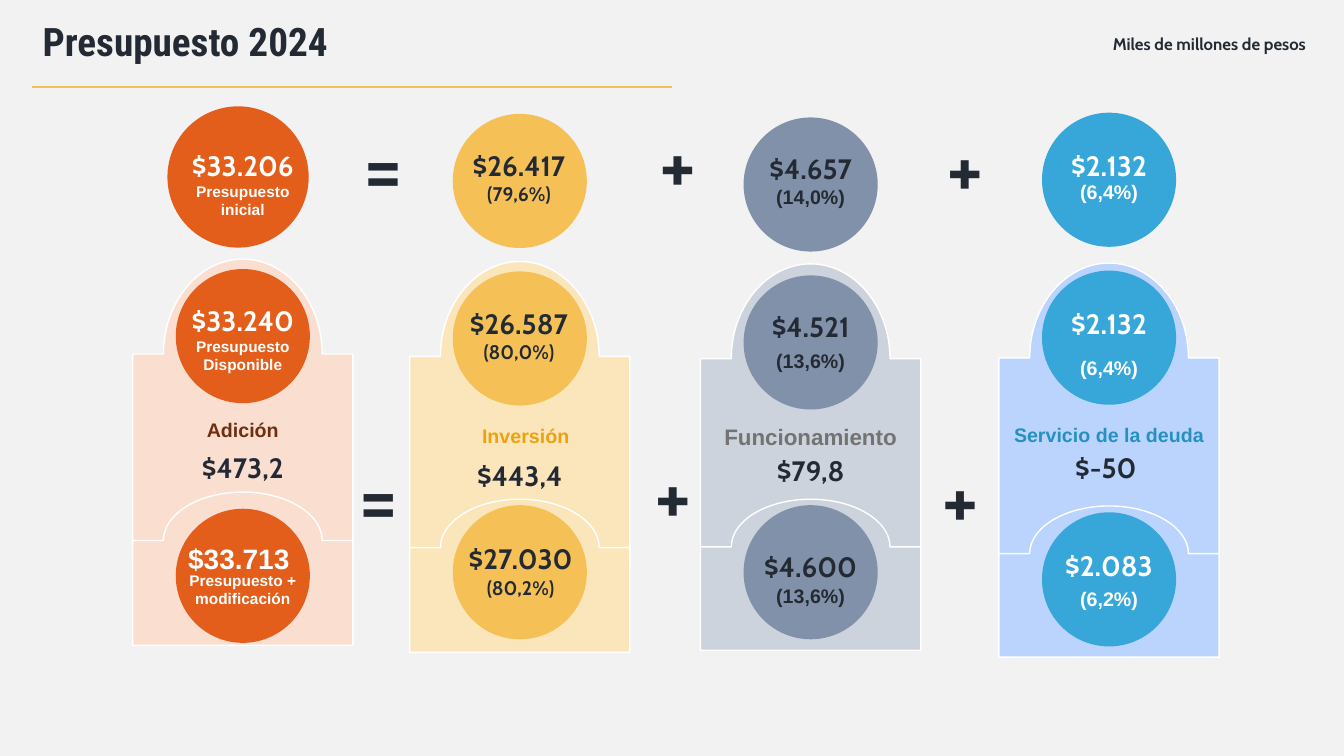
"""Build the 2024 budget slide: initial, available and modified budget by component."""
from dataclasses import dataclass

from lxml.etree import SubElement
from pptx import Presentation
from pptx.dml.color import RGBColor
from pptx.enum.shapes import MSO_CONNECTOR as Connector, MSO_SHAPE as Preset
from pptx.enum.text import MSO_ANCHOR as Anchor, MSO_AUTO_SIZE as AutoSize, PP_ALIGN as Align
from pptx.oxml.ns import qn
from pptx.util import Cm, Pt


@dataclass(frozen=True)
class Theme:
    background: str = "F2F2F2"
    navy: str = "232A34"
    white: str = "FFFFFF"
    amber: str = "F5C157"
    title: tuple = ("Roboto Condensed", 28)
    unit: tuple = ("Cabin", 12)
    amount: tuple = ("Cabin", 20)
    amount_plain: tuple = ("Arial", 20)
    share: tuple = ("Cabin", 14)
    share_plain: tuple = ("Arial", 14)
    note: tuple = ("Arial", 11)
    name: tuple = ("Arial", 14)
    name_large: tuple = ("Arial", 16)
    operator: tuple = ("Montserrat", 44)


@dataclass(frozen=True)
class Component:
    center: float
    fill: str
    tint: str
    ink: str
    accent: str
    cards: tuple
    circles: tuple
    name: tuple
    change: tuple
    captions: tuple
    change_panel: bool = False


CARD_WIDTH, DOME_RADIUS, CIRCLE, ROUNDNESS = 5.55, 2.0, 3.38, 0.55
THEME = Theme()

COMPONENTS = (
    Component(
        13.1, THEME.amber, "FBE6BC", THEME.navy, "EBA20E",
        ((6.59, 7.62, 2.39), (12.58, 3.86, 1.22)),
        ((13.1, 2.87, CIRCLE), (13.1, 6.84, CIRCLE), (13.1, 12.73, CIRCLE)),
        (13.25, 10.55, 5.97, ("Inversión", "name")),
        (13.1, 11.43, 3.35, ("$443,4", "amount")),
        ((13.08, 3.61, 3.3, ("$26.417", "amount"), ("(79,6%)", "share")),
         (13.08, 7.59, 3.3, ("$26.587", "amount"), ("(80,0%)", "share")),
         (13.12, 13.53, 3.78, ("$27.030", "amount"), ("(80,2%)", "share"))),
    ),
    Component(
        20.43, "8091A9", "CCD3DD", THEME.navy, "737373",
        ((6.65, 7.62, 2.39), (12.58, 3.81, 1.2)),
        ((20.43, 2.96, CIRCLE), (20.43, 6.94, CIRCLE), (20.43, 12.73, CIRCLE)),
        (20.43, 10.53, 6.05, ("Funcionamiento", "name_large")),
        (20.43, 11.3, 4.11, ("$79,8", "amount")),
        ((20.43, 3.69, 4.11, ("$4.657", "amount"), ("(14,0%)", "share_plain")),
         (20.43, 7.67, 4.11, ("$4.521", "amount")),
         (20.43, 8.66, 2.39, ("(13,6%)", "share_plain")),
         (20.43, 13.72, 4.11, ("$4.600", "amount")),
         (20.43, 14.58, 2.39, ("(13,6%)", "share_plain"))),
    ),
    Component(
        27.95, "37A7D9", "BAD4FE", THEME.white, "2591C1",
        ((6.63, 7.62, 2.39), (12.75, 3.81, 1.2)),
        ((27.95, 2.84, CIRCLE), (27.95, 6.82, CIRCLE), (27.95, 12.91, CIRCLE)),
        (27.95, 10.53, 6.07, ("Servicio de la deuda", "name")),
        (27.87, 11.23, 4.11, ("$-50", "amount")),
        ((27.95, 3.63, 4.11, ("$2.132", "amount")),
         (27.95, 4.41, 2.39, ("(6,4%)", "share_plain")),
         (27.95, 7.59, 4.11, ("$2.132", "amount")),
         (27.95, 8.84, 2.39, ("(6,4%)", "share_plain")),
         (27.95, 13.69, 4.11, ("$2.083", "amount")),
         (27.95, 14.66, 2.39, ("(6,2%)", "share_plain"))),
    ),
    Component(
        6.12, "E25E1A", "FADFD1", THEME.white, "6F2E0D",
        ((6.53, 7.62, 2.39), (12.4, 3.86, 1.22)),
        ((6.0, 2.68, 3.56), (6.12, 6.78, CIRCLE), (6.12, 12.82, CIRCLE)),
        (6.12, 10.41, 5.69, ("Adición", "name")),
        (6.12, 11.23, 3.35, ("$473,2", "amount")),
        ((6.12, 3.61, 3.76, ("$33.206", "amount"), ("Presupuesto inicial", "note")),
         (6.12, 7.52, 3.3, ("$33.240", "amount"), ("Presupuesto Disponible", "note")),
         (6.02, 13.51, 3.3, ("$33.713", "amount_plain")),
         (6.12, 14.26, 3.89, ("Presupuesto + modificación", "note"))),
        change_panel=True,
    ),
)

OPERATORS = (
    ("=", 9.41, 3.28, 0.94), ("+", 16.97, 3.17, 1.22), ("+", 24.21, 3.28, 1.22),
    ("=", 9.29, 11.61, 0.94), ("+", 16.85, 11.51, 1.22), ("+", 24.09, 11.61, 1.22),
)


class BudgetSlide:
    def __init__(self, slide, theme):
        self.slide = slide
        self.shapes = slide.shapes
        self.theme = theme
        self.paint(slide.background.fill, theme.background)

    def paint(self, fill, color):
        fill.solid()
        fill.fore_color.rgb = RGBColor.from_string(color)

    def style(self, paragraph, role, color, align):
        family, size = getattr(self.theme, role)
        paragraph.alignment = align
        font = paragraph.font
        font.name, font.size, font.bold = family, Pt(size), True
        font.color.rgb = RGBColor.from_string(color)

    def title(self, wording):
        heading = self.shapes.title
        heading.left, heading.top = Cm(0.82), Cm(0.02)
        heading.width, heading.height = Cm(31.52), Cm(2.18)
        frame = heading.text_frame
        frame.text = wording
        frame.auto_size = AutoSize.NONE
        frame.vertical_anchor = Anchor.MIDDLE
        frame.paragraphs[0].line_spacing = 0.9
        self.style(frame.paragraphs[0], "title", self.theme.navy, Align.LEFT)

    def rule(self, left, right, top):
        underline = self.shapes.add_connector(
            Connector.STRAIGHT, Cm(left), Cm(top), Cm(right), Cm(top))
        self.paint(underline.line.fill, self.theme.amber)
        underline.line.width = Pt(1.5)
        SubElement(underline._element.spPr, qn("a:effectLst"))

    def preset(self, kind, bounds, color):
        shape = self.shapes.add_shape(kind, *bounds)
        shape.shadow.inherit = False
        self.paint(shape.fill, color)
        shape.line.fill.background()
        return shape

    def text(self, center, top, width, *lines, color, align=Align.CENTER, panel=None):
        height = 0.25 + 0.043 * sum(getattr(self.theme, role)[1] for _, role in lines)
        bounds = Cm(center - width / 2), Cm(top), Cm(width), Cm(height)
        if panel:
            holder = self.preset(Preset.RECTANGLE, bounds, panel)
        else:
            holder = self.shapes.add_textbox(*bounds)
        frame = holder.text_frame
        frame.word_wrap = True
        frame.auto_size = AutoSize.SHAPE_TO_FIT_TEXT
        frame.vertical_anchor = Anchor.TOP
        frame.text = "\n".join(wording for wording, _ in lines)
        for paragraph, (_, role) in zip(frame.paragraphs, lines):
            self.style(paragraph, role, color, align)

    def circle(self, center, top, diameter, color):
        bounds = Cm(center - diameter / 2), Cm(top), Cm(diameter), Cm(diameter)
        self.preset(Preset.OVAL, bounds, color)

    def domed_card(self, center, top, height, dome, color):
        shoulder, bottom = top + dome, top + height
        left, right = center - CARD_WIDTH / 2, center + CARD_WIDTH / 2
        corners = ((center, top), (center - DOME_RADIUS, shoulder), (left, shoulder),
                   (left, bottom), (right, bottom), (right, shoulder))
        builder = self.shapes.build_freeform(Cm(center + DOME_RADIUS), Cm(shoulder))
        builder.add_line_segments([(Cm(x), Cm(y)) for x, y in corners], close=True)
        card = builder.convert_to_shape()
        card.shadow.inherit = False
        self.paint(card.fill, color)
        self.paint(card.line.fill, self.theme.white)
        card.line.width = Pt(1)
        reach, rise = DOME_RADIUS * ROUNDNESS, dome * (1 - ROUNDNESS)
        middle = CARD_WIDTH / 2
        handles = (((middle + DOME_RADIUS, rise), (middle + reach, 0)),
                   ((middle - reach, 0), (middle - DOME_RADIUS, rise)))
        sides = list(card._element.iter(qn("a:lnTo")))
        for side, controls in zip(sides, handles):
            side.tag = qn("a:cubicBezTo")
            end = side[0]
            for x, y in controls:
                handle = SubElement(side, qn("a:pt"), x=str(int(Cm(x))), y=str(int(Cm(y))))
                end.addprevious(handle)

    def component(self, part):
        for card in part.cards:
            self.domed_card(part.center, *card, part.tint)
        for circle in part.circles:
            self.circle(*circle, part.fill)
        self.text(*part.name, color=part.accent)
        self.text(*part.change, color=self.theme.navy,
                  panel=part.tint if part.change_panel else None)
        for caption in part.captions:
            self.text(*caption, color=part.ink)


def main():
    deck = Presentation()
    deck.slide_width, deck.slide_height = Cm(33.87), Cm(19.05)
    budget = BudgetSlide(deck.slides.add_slide(deck.slide_layouts[5]), THEME)
    budget.title("Presupuesto 2024")
    budget.rule(0.81, 16.94, 2.2)
    budget.text(30.48, 0.73, 6.76, ("Miles de millones de pesos", "unit"), color=THEME.navy)
    for part in COMPONENTS:
        budget.component(part)
    for sign, center, top, width in OPERATORS:
        budget.text(center, top, width, (sign, "operator"), color=THEME.navy, align=Align.LEFT)
    deck.save("out.pptx")


if __name__ == "__main__":
    main()
